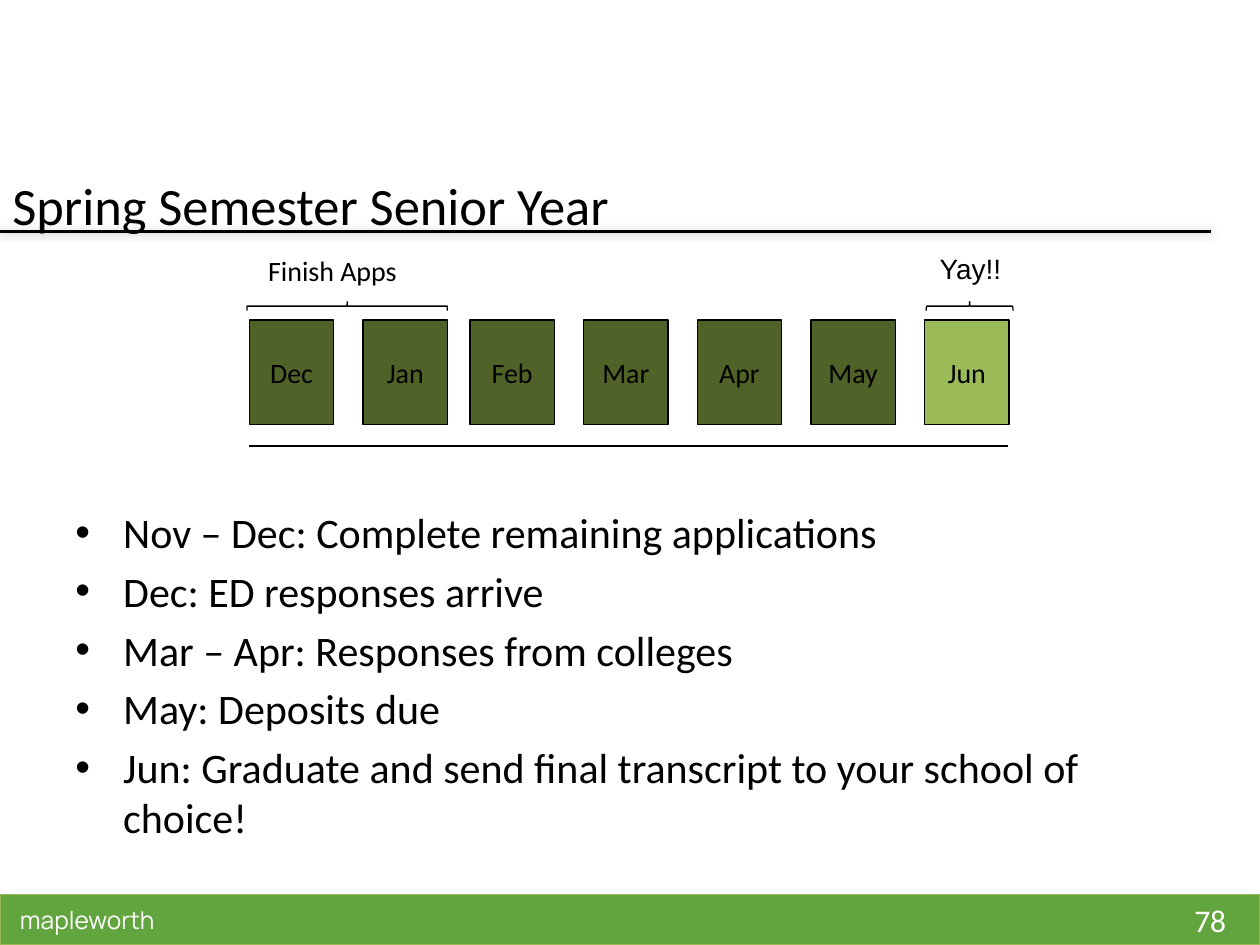
from lxml.etree import SubElement
from pptx import Presentation
from pptx.dml.color import RGBColor
from pptx.enum.shapes import MSO_CONNECTOR, MSO_SHAPE
from pptx.enum.text import MSO_ANCHOR, PP_ALIGN
from pptx.oxml.ns import qn
from pptx.util import Inches, Pt

BLACK = RGBColor(0x00, 0x00, 0x00)
WHITE = RGBColor(0xFF, 0xFF, 0xFF)
FOOTER_GREEN = RGBColor(0x62, 0xA4, 0x3E)
FOOTER_EDGE = RGBColor(0x98, 0xB9, 0x54)
DARK_GREEN = RGBColor(0x4F, 0x62, 0x28)
LIGHT_GREEN = RGBColor(0x9B, 0xBB, 0x59)

COLUMNS, ROWS = 100, 75
FOOTER_TOP, FOOTER_HEIGHT = 71, 4
MONTH_TOP, MONTH_WIDTH, MONTH_HEIGHT, MONTH_PITCH = 25.4, 6.7, 8.3, 9.02
WINTER_LEFT, SPRING_LEFT = 19.8, 37.3

BULLETS = [
    "Nov – Dec: Complete remaining applications",
    "Dec: ED responses arrive",
    "Mar – Apr: Responses from colleges",
    "May: Deposits due",
    "Jun: Graduate and send final transcript to your school of choice!",
]


def grid(*cells):
    """Turn grid columns or rows into lengths; one cell is a tenth of an inch."""
    return [Inches(cell / 10) for cell in cells]


def format_paragraph(paragraph, text, size=16, color=BLACK, font="Calibri", align=PP_ALIGN.LEFT):
    paragraph.text = text
    paragraph.alignment = align
    paragraph.font.size = Pt(size)
    paragraph.font.name = font
    paragraph.font.color.rgb = color


def add_text(slide, text, cells, anchor=MSO_ANCHOR.TOP, **text_format):
    frame = slide.shapes.add_textbox(*grid(*cells)).text_frame
    frame.word_wrap = True
    frame.vertical_anchor = anchor
    format_paragraph(frame.paragraphs[0], text, **text_format)


def add_box(slide, cells, fill, edge=BLACK):
    box = slide.shapes.add_shape(MSO_SHAPE.RECTANGLE, *grid(*cells))
    box.shadow.inherit = False
    box.fill.solid()
    box.fill.fore_color.rgb = fill
    box.line.color.rgb = edge
    box.line.width = Pt(0.75)
    return box


def add_month(slide, name, left, fill=DARK_GREEN):
    box = add_box(slide, (left, MONTH_TOP, MONTH_WIDTH, MONTH_HEIGHT), fill)
    box.text_frame.vertical_anchor = MSO_ANCHOR.MIDDLE
    format_paragraph(box.text_frame.paragraphs[0], name, align=PP_ALIGN.CENTER)


def add_rule(slide, left, right, row, width, soft_shadow=False):
    rule = slide.shapes.add_connector(MSO_CONNECTOR.STRAIGHT, *grid(left, row, right, row))
    rule.line.color.rgb = BLACK
    rule.line.width = Pt(width)
    effects = SubElement(rule._element.spPr, qn("a:effectLst"))
    if soft_shadow:
        shadow = SubElement(effects, qn("a:outerShdw"), blurRad=str(Pt(5)),
                            dist=str(Pt(0.5)), dir="5400000", rotWithShape="0")
        color = SubElement(shadow, qn("a:srgbClr"), val="808080")
        SubElement(color, qn("a:alpha"), val="50000")


def add_brace(slide, center, row, span, curve):
    """Add a brace that opens downward over a span of columns."""
    depth = 0.7
    cells = (center - depth / 2, row - span / 2, depth, span)
    brace = slide.shapes.add_shape(MSO_SHAPE.LEFT_BRACE, *grid(*cells))
    brace.rotation = 90
    brace.adjustments[0] = curve
    brace.shadow.inherit = False
    brace.fill.background()
    brace.line.color.rgb = BLACK
    brace.line.width = Pt(0.75)


def add_bullets(slide, items, cells):
    frame = slide.shapes.add_textbox(*grid(*cells)).text_frame
    frame.word_wrap = True
    for index, item in enumerate(items):
        paragraph = frame.add_paragraph() if index else frame.paragraphs[0]
        properties = paragraph._p.get_or_add_pPr()
        properties.set("marL", str(Inches(0.38)))
        properties.set("indent", str(-Inches(0.38)))
        SubElement(properties, qn("a:buFont"), typeface="Arial")
        SubElement(properties, qn("a:buChar"), char="•")
        format_paragraph(paragraph, item, size=24)
        if index:
            paragraph.space_before = Pt(4.8)


def add_footer(slide):
    add_box(slide, (0, FOOTER_TOP, COLUMNS, FOOTER_HEIGHT), FOOTER_GREEN, FOOTER_EDGE)
    add_text(slide, "78", (92.1, FOOTER_TOP, 7.9, FOOTER_HEIGHT), MSO_ANCHOR.MIDDLE,
             size=18, color=WHITE, align=PP_ALIGN.CENTER)
    add_text(slide, "mapleworth", (0.6, FOOTER_TOP, 14, FOOTER_HEIGHT), MSO_ANCHOR.MIDDLE,
             size=14, color=WHITE, font="Manrope")


def add_timeline(slide):
    for start, names in ((WINTER_LEFT, ("Dec", "Jan")),
                         (SPRING_LEFT, ("Feb", "Mar", "Apr", "May", "Jun"))):
        for index, name in enumerate(names):
            fill = LIGHT_GREEN if name == "Jun" else DARK_GREEN
            add_month(slide, name, start + index * MONTH_PITCH, fill)
    add_rule(slide, WINTER_LEFT, 80, 35.4, 0.75)
    add_brace(slide, 27.55, 24.3, 15.9, 0.01)
    add_brace(slide, 76.95, 24.3, 6.9, 0.08)
    add_text(slide, "Finish Apps", (20.3, 19.6, 14.8, 3.7))
    add_text(slide, "Yay!!", (73.6, 19.5, 7.3, 3.7), font="Arial")


def main():
    presentation = Presentation()
    presentation.slide_width, presentation.slide_height = grid(COLUMNS, ROWS)
    slide = presentation.slides.add_slide(presentation.slide_layouts[6])
    add_footer(slide)
    add_rule(slide, 0, 96.1, 18.4, 1.5, soft_shadow=True)
    add_text(slide, "Spring Semester Senior Year", (0, 12.6, 90, 7.2), MSO_ANCHOR.MIDDLE, size=30)
    add_bullets(slide, BULLETS, (5, 39.7, 90, 32.2))
    add_timeline(slide)
    presentation.save("out.pptx")


if __name__ == "__main__":
    main()
